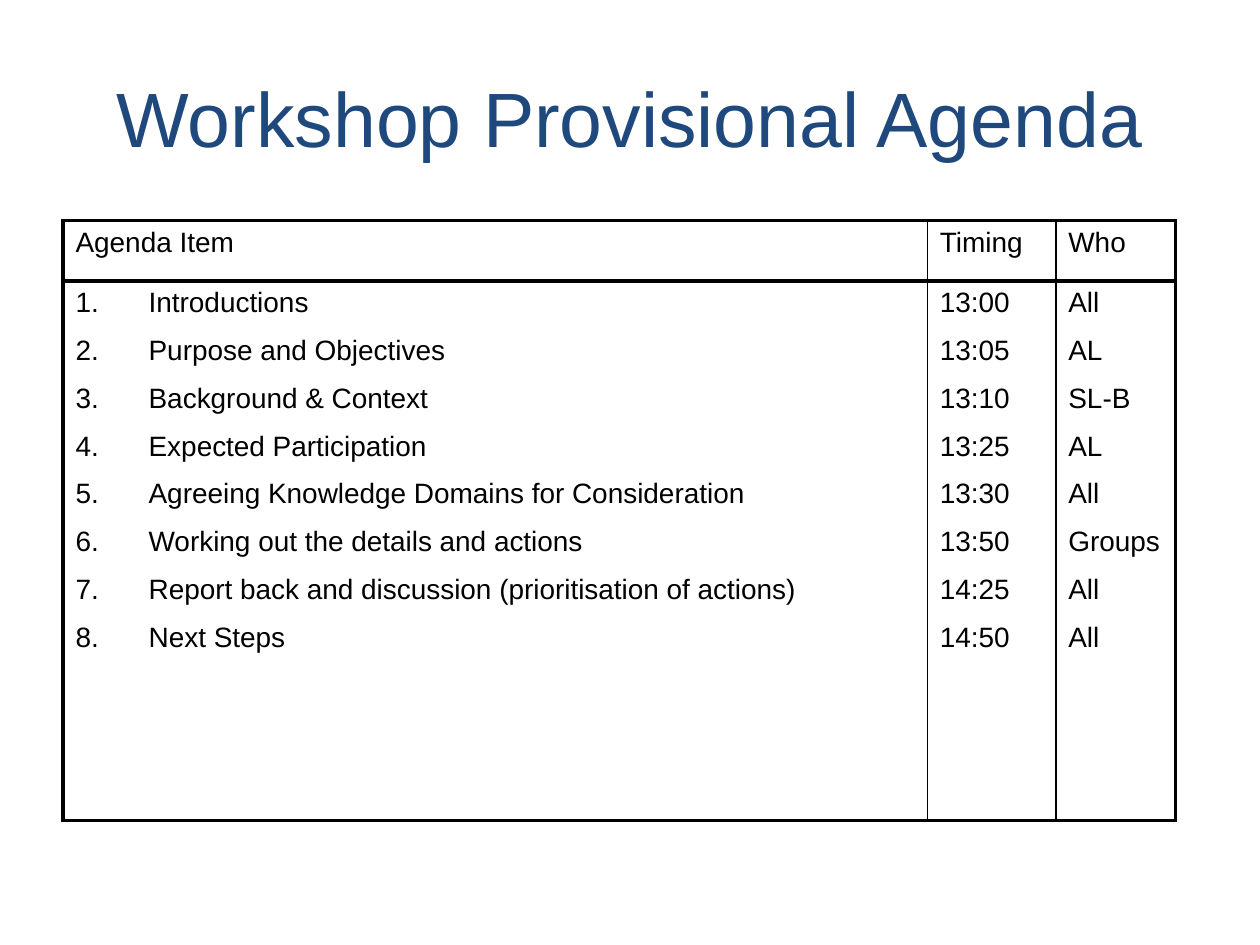
from pptx import Presentation
from pptx.dml.color import RGBColor
from pptx.enum.text import MSO_ANCHOR, PP_ALIGN
from pptx.oxml.ns import qn
from pptx.util import Inches, Pt
from lxml.etree import SubElement

TITLE = "Workshop Provisional Agenda"
HEADS = ("Agenda Item", "Timing", "Who")
ITEMS = [
    ("Introductions", "13:00", "All"),
    ("Purpose and Objectives", "13:05", "AL"),
    ("Background & Context", "13:10", "SL-B"),
    ("Expected Participation", "13:25", "AL"),
    ("Agreeing Knowledge Domains for Consideration", "13:30", "All"),
    ("Working out the details and actions", "13:50", "Groups"),
    ("Report back and discussion (prioritisation of actions)", "14:25", "All"),
    ("Next Steps", "14:50", "All"),
]
COLS = (6.86, 1.02, 0.95)
ROWS = (0.48, 4.28)
THEME = {
    "font": "Arial", "title": "1F497D", "ink": "000000",
    "big": 44, "body": 16, "thick": 2.25, "thin": 1,
    "gap": 30, "indent": 0.58,
}


def write(frame, lines, size=THEME["body"], color=THEME["ink"],
          align=PP_ALIGN.LEFT, gap=0, indent=0, count=False):
    frame.word_wrap = True
    for i, line in enumerate(lines):
        para = frame.add_paragraph() if i else frame.paragraphs[0]
        para.alignment = align
        run = para.add_run()
        run.text = line
        run.font.name = THEME["font"]
        run.font.size = Pt(size)
        run.font.color.rgb = RGBColor.from_string(color)
        props = para._p.get_or_add_pPr()
        if indent:
            props.set("marL", str(Inches(indent)))
            props.set("indent", str(-Inches(indent)))
        if gap:
            for tag in ("a:spcBef", "a:spcAft"):
                space = SubElement(props, qn(tag))
                SubElement(space, qn("a:spcPct"), val=str(gap * 1000))
        if count:
            SubElement(props, qn("a:buAutoNum"), type="arabicPeriod")


def frame_cell(cell, sides):
    props = cell._tc.get_or_add_tcPr()
    for side, width in sides.items():
        line = SubElement(props, qn("a:ln" + side), w=str(Pt(width)))
        fill = SubElement(line, qn("a:solidFill"))
        SubElement(fill, qn("a:srgbClr"), val=THEME["ink"])
    cell.fill.background()


def main():
    deck = Presentation()
    deck.slide_width, deck.slide_height = Inches(10), Inches(7.5)
    slide = deck.slides.add_slide(deck.slide_layouts[6])

    box = slide.shapes.add_textbox(Inches(0.5), Inches(0.3), Inches(9), Inches(1.25))
    box.text_frame.vertical_anchor = MSO_ANCHOR.MIDDLE
    write(box.text_frame, [TITLE], size=THEME["big"], color=THEME["title"],
          align=PP_ALIGN.CENTER)

    table = slide.shapes.add_table(
        len(ROWS), len(COLS), Inches(0.5), Inches(1.75),
        Inches(sum(COLS)), Inches(sum(ROWS))).table
    table.first_row = table.horz_banding = False
    for row, high in zip(table.rows, ROWS):
        row.height = Inches(high)
    thick, thin = THEME["thick"], THEME["thin"]
    last = len(COLS) - 1
    for c, wide in enumerate(COLS):
        table.columns[c].width = Inches(wide)
        sides = {"L": thin if c else thick, "R": thick if c == last else thin,
                 "T": thick, "B": thick}
        for r, lines in enumerate(([HEADS[c]], [item[c] for item in ITEMS])):
            cell = table.cell(r, c)
            frame_cell(cell, sides)
            write(cell.text_frame, lines, gap=THEME["gap"],
                  indent=0 if c else THEME["indent"], count=r == 1 and c == 0)

    deck.save("out.pptx")


if __name__ == "__main__":
    main()
